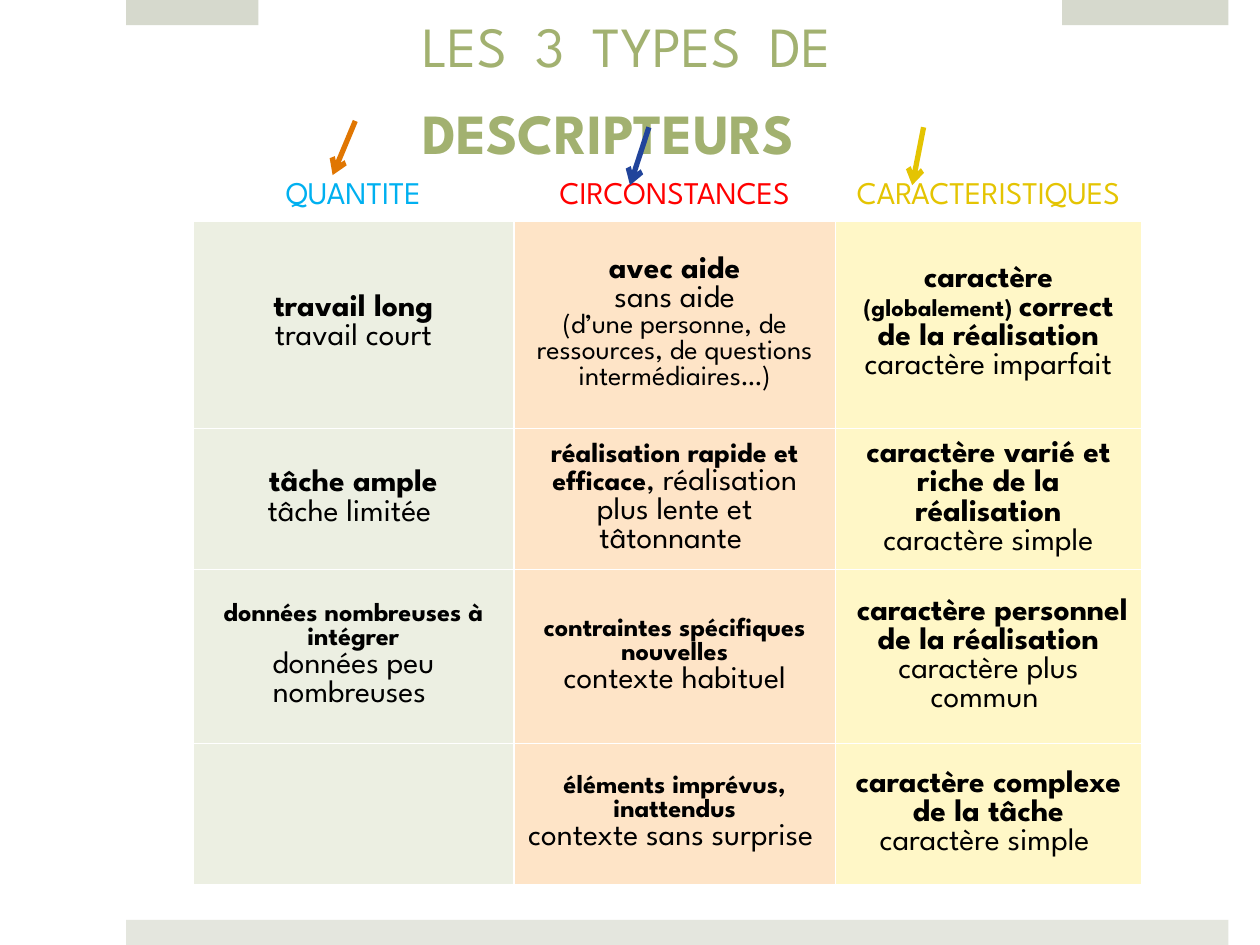
from lxml.etree import SubElement
from pptx import Presentation
from pptx.dml.color import RGBColor
from pptx.enum.shapes import MSO_CONNECTOR, MSO_SHAPE
from pptx.enum.text import MSO_ANCHOR, MSO_AUTO_SIZE, PP_ALIGN
from pptx.oxml import parse_xml
from pptx.oxml.ns import nsdecls, qn
from pptx.util import Inches, Pt

FONT = "League Spartan"
HEADERS = [("QUANTITE", "00B0F0"), ("CIRCONSTANCES", "FF0000"),
           ("CARACTERISTIQUES", "E4C402")]
COLUMN_FILLS = ["ECEFE2", "FEE4C7", "FFF7C7"]
COLUMN_WIDTHS = [2.55, 2.55, 2.43]
ROW_HEIGHTS = [0.35, 1.66, 1.12, 1.38, 1.12]

# A cell is a list of paragraphs, a paragraph a list of (text, size, bold) runs.
BODY = [
    [
        [[("travail long", 18, True)], [("travail court", 18, False)]],
        [[("avec aide", 18, True)], [("sans aide", 18, False)],
         [("(d’une personne, de ressources, de questions intermédiaires…)", 16, False)]],
        [[("caractère ", 18, True), ("(globalement) ", 14, True),
          ("correct de la réalisation", 18, True),
          (" caractère imparfait", 18, False)]],
    ],
    [
        [[("tâche ample", 18, True)], [("tâche limitée ", 18, False)]],
        [[("réalisation rapide et efficace", 16, True),
          (", réalisation plus lente et tâtonnante ", 18, False)]],
        [[("caractère varié et riche de la réalisation", 18, True)],
         [("caractère simple", 18, False)]],
    ],
    [
        [[("données nombreuses à intégrer", 15, True)],
         [("données peu nombreuses ", 18, False)]],
        [[("contraintes spécifiques nouvelles", 15, True)],
         [("contexte habituel", 18, False)]],
        [[(" ", 18, False), ("caractère personnel de la réalisation", 18, True)],
         [("caractère plus commun ", 18, False)]],
    ],
    [
        [],
        [[("éléments imprévus, inattendus", 15, True)],
         [("contexte sans surprise ", 18, False)]],
        [[("caractère complexe de la tâche", 18, True)],
         [("caractère simple ", 18, False)]],
    ],
]


def rgb(value):
    return RGBColor.from_string(value)


def apply(obj, **values):
    for name, value in values.items():
        setattr(obj, name, value)


def add_run(p, text, size, bold, color):
    r = p.add_run()
    r.text = text
    apply(r.font, name=FONT, size=Pt(size), bold=bold)
    r.font.color.rgb = rgb(color)


def add_bar(s, box, color):
    sp = s.shapes.add_shape(MSO_SHAPE.RECTANGLE, *map(Inches, box))
    sp.shadow.inherit = False
    sp.fill.solid()
    sp.fill.fore_color.rgb = rgb(color)
    sp.line.fill.background()


def add_title(s, box):
    sp = s.shapes.title
    apply(sp, **dict(zip(("left", "top", "width", "height"), map(Inches, box))))
    tf = sp.text_frame
    apply(tf, word_wrap=True, auto_size=MSO_AUTO_SIZE.NONE,
          vertical_anchor=MSO_ANCHOR.MIDDLE,
          margin_left=Inches(1.3), margin_right=Inches(0.3),
          margin_top=Inches(0.05), margin_bottom=Inches(0.05))
    p = tf.paragraphs[0]
    apply(p, alignment=PP_ALIGN.LEFT, line_spacing=1.28)
    add_run(p, "LES  3  TYPES  DE  ", 32.4, False, "A2B170")
    add_run(p, "DESCRIPTEURS", 32.4, True, "A2B170")


def set_borders(cell, widths):
    """Give the cell white left, right, top and bottom lines, in points."""
    tcPr = cell._tc.get_or_add_tcPr()
    for i, (side, width) in enumerate(zip("LRTB", widths)):
        tcPr.insert(i, parse_xml(
            f'<a:ln{side} {nsdecls("a")} w="{Pt(width)}"><a:solidFill>'
            f'<a:srgbClr val="FFFFFF"/></a:solidFill></a:ln{side}>'))


def fill_cell(cell, paragraphs, fill, color="000000", borders=(1, 1, 1, 1)):
    apply(cell, vertical_anchor=MSO_ANCHOR.MIDDLE,
          margin_left=Inches(0.08), margin_right=Inches(0.08),
          margin_top=Inches(0.05), margin_bottom=Inches(0.05))
    cell.fill.solid()
    cell.fill.fore_color.rgb = rgb(fill)
    set_borders(cell, borders)
    tf = cell.text_frame
    for i, runs in enumerate(paragraphs):
        p = tf.add_paragraph() if i else tf.paragraphs[0]
        p.alignment = PP_ALIGN.CENTER
        for run in runs:
            add_run(p, *run, color)


def add_descriptors(s, left, top):
    size = (sum(COLUMN_WIDTHS), sum(ROW_HEIGHTS))
    table = s.shapes.add_table(len(ROW_HEIGHTS), len(COLUMN_WIDTHS),
                               *map(Inches, (left, top, *size))).table
    apply(table, first_row=False, horz_banding=False)
    for column, width in zip(table.columns, COLUMN_WIDTHS):
        column.width = Inches(width)
    for row, height in zip(table.rows, ROW_HEIGHTS):
        row.height = Inches(height)
    for c, (text, color) in enumerate(HEADERS):
        fill_cell(table.cell(0, c), [[(text, 18, False)]], "FFFFFF", color, (1, 1, 1, 3))
    for r, row in enumerate(BODY, 1):
        for c, paragraphs in enumerate(row):
            fill_cell(table.cell(r, c), paragraphs, COLUMN_FILLS[c])


def add_arrow(s, start, end, color):
    line = s.shapes.add_connector(MSO_CONNECTOR.STRAIGHT, *map(Inches, start + end))
    line.line.width = Pt(3)
    line.line.color.rgb = rgb(color)
    SubElement(line.line._get_or_add_ln(), qn("a:tailEnd"), type="arrow")
    SubElement(line._element.spPr, qn("a:effectLst"))


def main():
    prs = Presentation()
    apply(prs, slide_width=Inches(10), slide_height=Inches(7.5))
    s = prs.slides.add_slide(prs.slide_layouts[5])
    add_title(s, (2.05, 0, 6.38, 1.25))
    add_bar(s, (1, 0, 1.05, 0.2), "D6D9CD")
    add_bar(s, (8.43, 0, 1.32, 0.2), "D6D9CD")
    add_bar(s, (1, 7.3, 8.75, 0.2), "E4E6DE")
    add_descriptors(s, 1.53, 1.39)
    add_arrow(s, (2.82, 0.96), (2.64, 1.39), "E07602")
    add_arrow(s, (7.33, 1.01), (7.24, 1.47), "E4C402")
    add_arrow(s, (5.15, 1.01), (5, 1.47), "21449B")
    prs.save("out.pptx")


if __name__ == "__main__":
    main()
